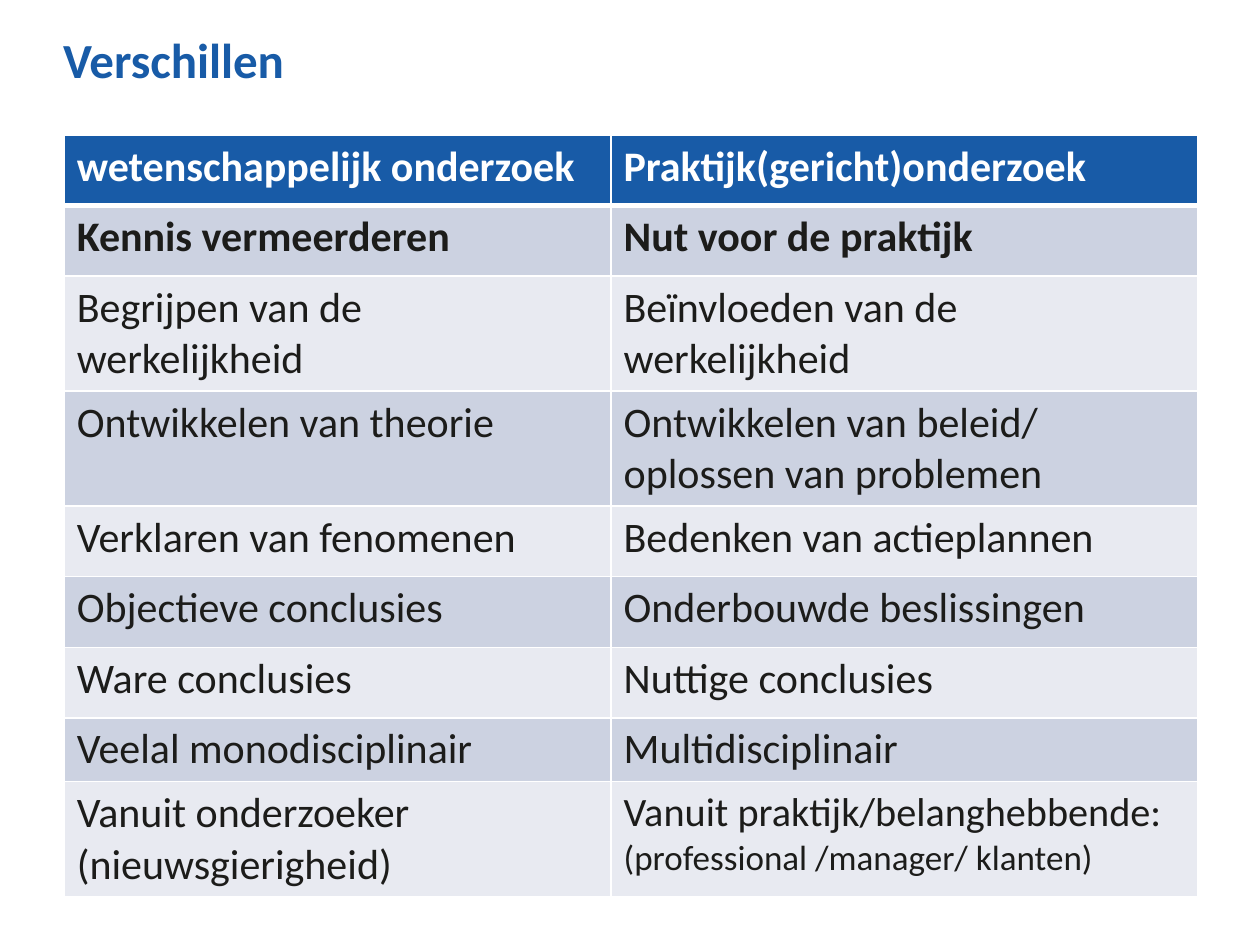
from lxml import etree
from pptx import Presentation
from pptx import util as u
from pptx.dml.color import RGBColor
from pptx.enum import text
from pptx.oxml.ns import qn

HUES = {"blue": "185BA7", "white": "FFFFFF", "ink": "1C1C1A",
        "dark": "CCD2E1", "light": "E8EAF1"}
COLS = (4.34, 4.66)
ROWS = (
    (0.56, "wetenschappelijk onderzoek", "Praktijk(gericht)onderzoek"),
    (0.56, "Kennis vermeerderen", "Nut voor de praktijk"),
    (0.63, "Begrijpen van de werkelijkheid", "Beïnvloeden van de werkelijkheid"),
    (0.79, "Ontwikkelen van theorie",
     "Ontwikkelen van beleid/ oplossen van problemen"),
    (0.56, "Verklaren van fenomenen", "Bedenken van actieplannen"),
    (0.56, "Objectieve conclusies", "Onderbouwde beslissingen"),
    (0.56, "Ware conclusies", "Nuttige conclusies"),
    (0.46, "Veelal monodisciplinair", "Multidisciplinair"),
    (0.85, "Vanuit onderzoeker\n(nieuwsgierigheid)",
     "Vanuit praktijk/belanghebbende:\n(professional /manager/ klanten)"),
)


def apply(item, vals):
    """Set each named attribute on an object."""
    for key, val in vals.items():
        setattr(item, key, val)


def style(run, size, hue, bold):
    """Format the font of a run."""
    apply(run.font, {"name": "Calibri", "size": u.Pt(size), "bold": bold})
    run.font.color.rgb = RGBColor.from_string(HUES[hue])


def edge(cell, side, width):
    """Draw one white border of a cell."""
    line = etree.SubElement(cell._tc.get_or_add_tcPr(), qn("a:ln" + side),
                            w=str(u.Pt(width)))
    fill = etree.SubElement(line, qn("a:solidFill"))
    etree.SubElement(fill, qn("a:srgbClr"), val=HUES["white"])


def add_title(slide):
    """Place the slide title."""
    title = slide.shapes.title
    apply(title, {"left": u.Inches(0.5), "top": u.Inches(0.29),
                  "width": u.Inches(9), "height": u.Inches(0.87)})
    frame = title.text_frame
    frame.text = "Verschillen"
    apply(frame, {"margin_left": 0, "margin_top": 0, "margin_right": 0,
                  "margin_bottom": 0, "word_wrap": True,
                  "auto_size": text.MSO_AUTO_SIZE.NONE,
                  "vertical_anchor": text.MSO_ANCHOR.TOP})
    para = frame.paragraphs[0]
    apply(para, {"alignment": text.PP_ALIGN.LEFT, "line_spacing": 0.9})
    style(para.runs[0], 28, "blue", True)


def fill_cell(cell, words, row, sizes):
    """Write, border and colour one table cell."""
    cell.text = words
    hue = "white" if row == 0 else "ink"
    for para, size in zip(cell.text_frame.paragraphs, sizes):
        style(para.runs[0], size, hue, row < 2)
    for side in "LRTB":
        thick = (row, side) in ((0, "B"), (1, "T"))
        edge(cell, side, 3 if thick else 1)
    back = "blue" if row == 0 else ("light", "dark")[row % 2]
    cell.fill.solid()
    cell.fill.fore_color.rgb = RGBColor.from_string(HUES[back])


def add_grid(slide):
    """Build the comparison table."""
    high = sum(row[0] for row in ROWS)
    grid = slide.shapes.add_table(
        len(ROWS), len(COLS), u.Inches(0.51), u.Inches(1.07),
        u.Inches(sum(COLS)), u.Inches(high)).table
    for col, width in zip(grid.columns, COLS):
        col.width = u.Inches(width)
    for i, (height, *words) in enumerate(ROWS):
        grid.rows[i].height = u.Inches(height)
        for j, word in enumerate(words):
            last = i == len(ROWS) - 1 and j == 1
            fill_cell(grid.cell(i, j), word, i, (23, 20) if last else (24, 24))


def main():
    """Build and save the slide."""
    deck = Presentation()
    apply(deck, {"slide_width": u.Inches(10), "slide_height": u.Inches(7.5)})
    slide = deck.slides.add_slide(deck.slide_layouts[5])
    add_title(slide)
    add_grid(slide)
    deck.save("out.pptx")


if __name__ == "__main__":
    main()
